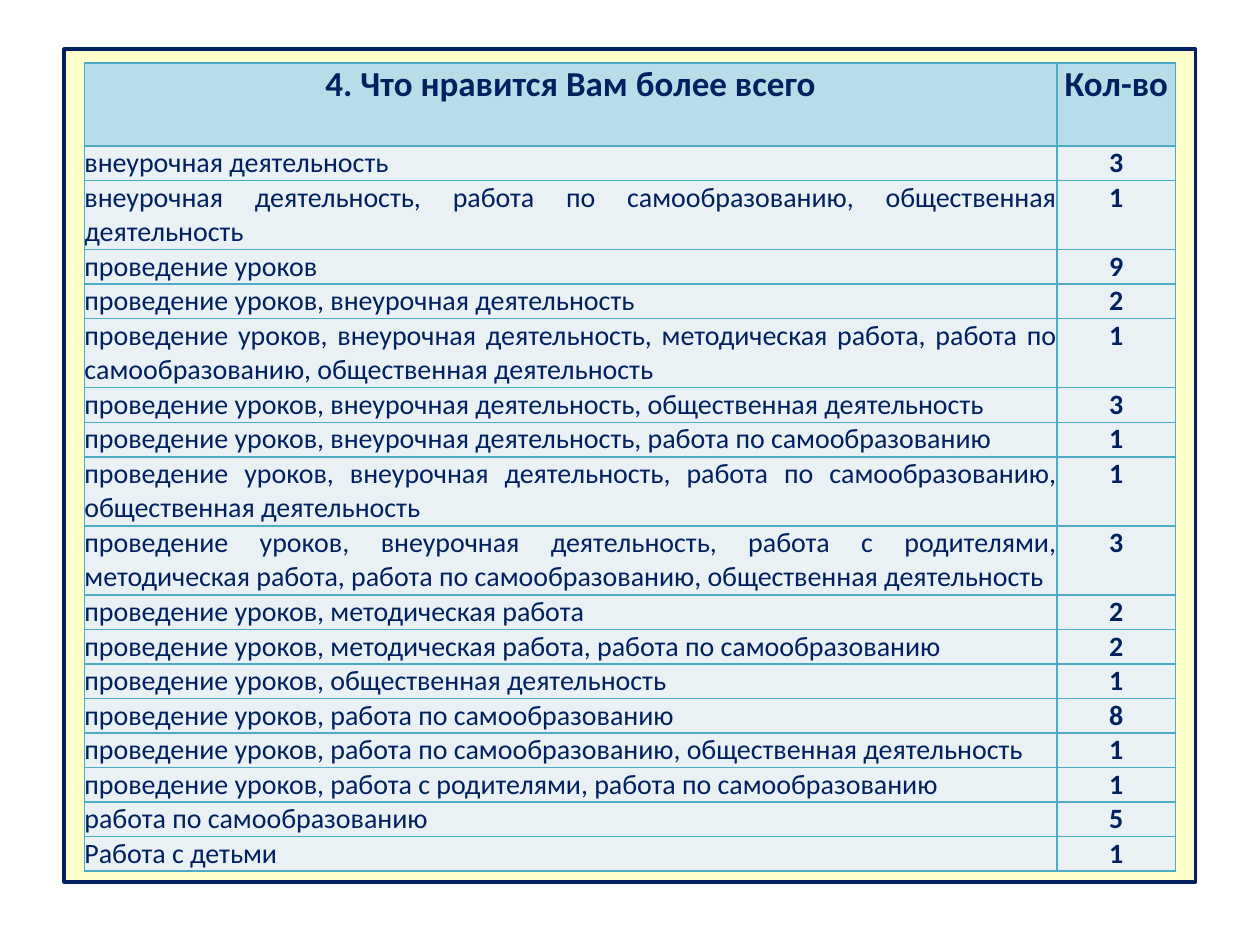
from lxml import etree
from pptx import Presentation
from pptx.dml.color import RGBColor
from pptx.enum.shapes import MSO_SHAPE
from pptx.enum.text import PP_ALIGN
from pptx.oxml.ns import qn
from pptx.util import Inches, Pt

RECTANGLE = MSO_SHAPE.RECTANGLE
CENTER = PP_ALIGN.CENTER
JUSTIFY = PP_ALIGN.JUSTIFY
NAVY = RGBColor(0x00, 0x20, 0x60)
CREAM = RGBColor(0xFF, 0xFF, 0xCC)
HEADER_BLUE = RGBColor(0xB7, 0xDE, 0xE8)
BODY_BLUE = RGBColor(0xE9, 0xF1, 0xF5)
BORDER_BLUE = RGBColor(0x4B, 0xAC, 0xC6)

LESSONS = "проведение уроков"
EXTRA = "внеурочная деятельность"
METHODS = "методическая работа"
SELF_STUDY = "работа по самообразованию"
PARENTS = "работа с родителями"
SOCIAL = "общественная деятельность"

ANSWERS = [
    ([EXTRA], 3, 1),
    ([EXTRA, SELF_STUDY, SOCIAL], 1, 2),
    ([LESSONS], 9, 1),
    ([LESSONS, EXTRA], 2, 1),
    ([LESSONS, EXTRA, METHODS, SELF_STUDY, SOCIAL], 1, 2),
    ([LESSONS, EXTRA, SOCIAL], 3, 1),
    ([LESSONS, EXTRA, SELF_STUDY], 1, 1),
    ([LESSONS, EXTRA, SELF_STUDY, SOCIAL], 1, 2),
    ([LESSONS, EXTRA, PARENTS, METHODS, SELF_STUDY, SOCIAL], 3, 2),
    ([LESSONS, METHODS], 2, 1),
    ([LESSONS, METHODS, SELF_STUDY], 2, 1),
    ([LESSONS, SOCIAL], 1, 1),
    ([LESSONS, SELF_STUDY], 8, 1),
    ([LESSONS, SELF_STUDY, SOCIAL], 1, 1),
    ([LESSONS, PARENTS, SELF_STUDY], 1, 1),
    ([SELF_STUDY], 5, 1),
    (["Работа с детьми"], 1, 1),
]
HEADER_LINES = 2.4
ROWS = [("4. Что нравится Вам более всего", "Кол-во", HEADER_LINES)]
ROWS += [(", ".join(parts), str(count), lines) for parts, count, lines in ANSWERS]
COLUMN_WIDTHS = [Inches(7.72), Inches(0.94)]
TABLE_HEIGHT = Inches(6.42)
LINE_HEIGHT = TABLE_HEIGHT / sum(lines for _, _, lines in ROWS)


def add_borders(cell):
    properties = cell._tc.get_or_add_tcPr()
    for side in ("a:lnL", "a:lnR", "a:lnT", "a:lnB"):
        line = etree.SubElement(properties, qn(side), w=str(Pt(1)))
        fill = etree.SubElement(line, qn("a:solidFill"))
        etree.SubElement(fill, qn("a:srgbClr"), val=str(BORDER_BLUE))


presentation = Presentation()
presentation.slide_width = Inches(10)
presentation.slide_height = Inches(7.5)
slide = presentation.slides.add_slide(presentation.slide_layouts[6])

frame = slide.shapes.add_shape(
    RECTANGLE, Inches(0.51), Inches(0.39), Inches(8.98), Inches(6.61))
frame.shadow.inherit = False
frame.fill.solid()
frame.fill.fore_color.rgb = CREAM
frame.line.color.rgb = NAVY
frame.line.width = Pt(2)

table = slide.shapes.add_table(
    len(ROWS), len(COLUMN_WIDTHS), Inches(0.67), Inches(0.5),
    sum(COLUMN_WIDTHS), TABLE_HEIGHT).table
table.horz_banding = False
for column, width in zip(table.columns, COLUMN_WIDTHS):
    column.width = width

for row_index, (answer, count, lines) in enumerate(ROWS):
    is_header = row_index == 0
    table.rows[row_index].height = int(LINE_HEIGHT * lines)
    for column_index, text in enumerate((answer, count)):
        is_answer = column_index == 0 and not is_header
        cell = table.cell(row_index, column_index)
        cell.margin_left = cell.margin_right = 0
        cell.margin_top = cell.margin_bottom = 0
        add_borders(cell)
        cell.fill.solid()
        cell.fill.fore_color.rgb = HEADER_BLUE if is_header else BODY_BLUE
        cell.text_frame.text = text
        paragraph = cell.text_frame.paragraphs[0]
        paragraph.alignment = JUSTIFY if is_answer else CENTER
        font = paragraph.runs[0].font
        font.name = "Calibri"
        font.size = Pt(20 if is_header else 16)
        font.bold = not is_answer
        font.color.rgb = NAVY

presentation.save("out.pptx")
